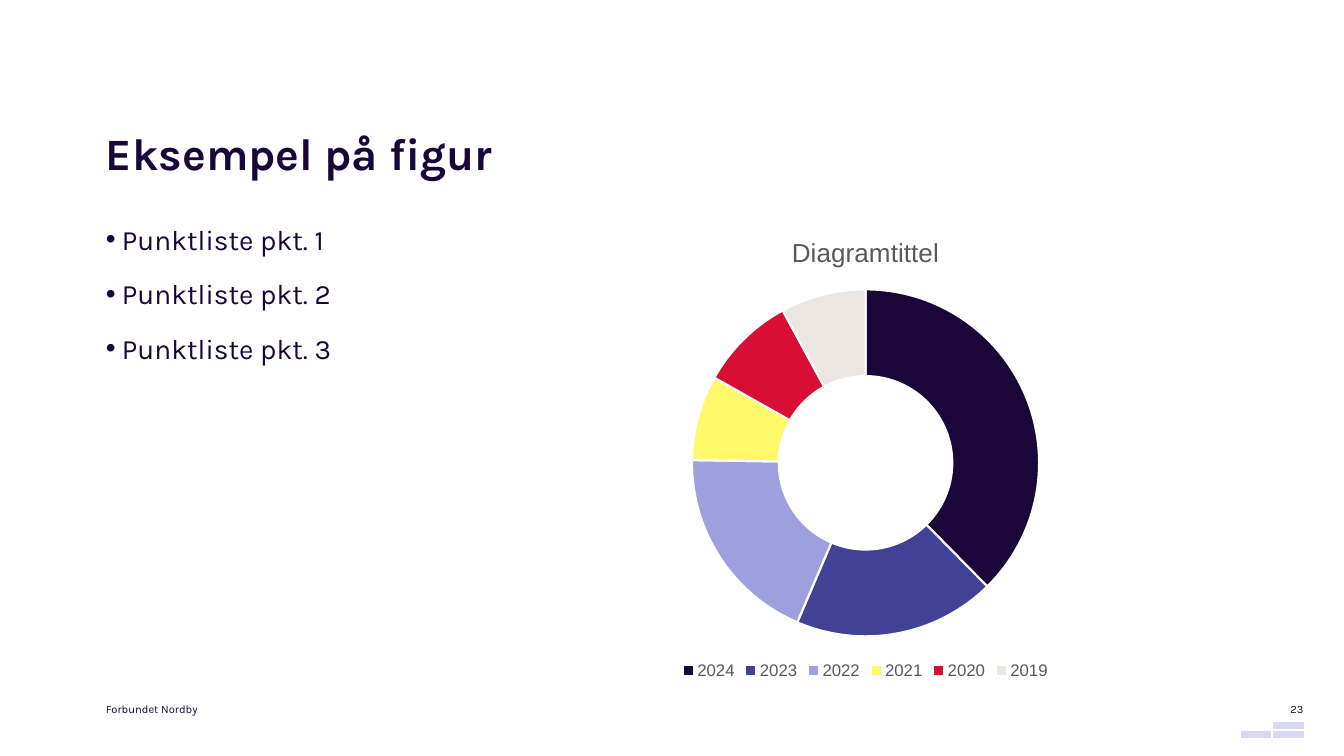
"""Builds a slide with a bullet list and a doughnut chart."""
import lxml.etree
import pptx
import pptx.chart.data
import pptx.dml.color
import pptx.enum.chart
import pptx.enum.shapes
import pptx.enum.text
import pptx.oxml.ns
import pptx.util

COLORS = {
    "ink": "1A0638",
    "indigo": "414197",
    "lavender": "9DA0DC",
    "yellow": "FFF969",
    "red": "D80E34",
    "sand": "ECE6E3",
    "pale": "D8D9F1",
    "grey": "595959",
    "white": "FFFFFF",
}
EMU_PER_PX = 9144
ALIGN = pptx.enum.text.PP_ALIGN
ANCHOR = pptx.enum.text.MSO_ANCHOR


def px(length):
    return pptx.util.Emu(length * EMU_PER_PX)


def rgb(name):
    return pptx.dml.color.RGBColor.from_string(COLORS[name])


class SlideBuilder:
    text_font = "Karla"
    chart_font = "Arial"

    def __init__(self, slide):
        self.slide = slide

    def set_font(self, font, size, color="ink", bold=False, name=None):
        font.name = name or self.text_font
        font.size = pptx.util.Pt(size)
        font.bold = bold
        font.color.rgb = rgb(color)

    def fill_text(self, shape, lines, size, bold=False, align=ALIGN.LEFT,
                  anchor=ANCHOR.TOP, line_spacing=None):
        frame = shape.text_frame
        frame.margin_left = frame.margin_right = 0
        frame.margin_top = frame.margin_bottom = 0
        frame.word_wrap = True
        frame.auto_size = pptx.enum.text.MSO_AUTO_SIZE.NONE
        frame.vertical_anchor = anchor
        frame.text = "\n".join(lines)
        for paragraph in frame.paragraphs:
            paragraph.alignment = align
            paragraph.line_spacing = line_spacing
            self.set_font(paragraph.font, size, bold=bold)
        return frame.paragraphs

    def title(self, text, left, top, width, height):
        shape = self.slide.shapes.title
        shape.left, shape.top = px(left), px(top)
        shape.width, shape.height = px(width), px(height)
        self.fill_text(shape, [text], 32, bold=True,
                       anchor=ANCHOR.BOTTOM, line_spacing=1.1)

    def text(self, lines, left, top, width, height, size, **style):
        shape = self.slide.shapes.add_textbox(
            px(left), px(top), px(width), px(height))
        return self.fill_text(shape, lines, size, **style)

    def bullets(self, lines, left, top, width, height):
        for paragraph in self.text(lines, left, top, width, height, 20,
                                   line_spacing=1.2):
            paragraph.space_before = pptx.util.Pt(10)
            properties = paragraph._p.get_or_add_pPr()
            properties.set("marL", str(px(16)))
            properties.set("indent", str(-px(20)))
            for tag, key, value in (("a:buFont", "typeface", "Arial"),
                                    ("a:buChar", "char", "•")):
                lxml.etree.SubElement(
                    properties, pptx.oxml.ns.qn(tag)).set(key, value)

    def bar(self, left, y, width):
        connector = self.slide.shapes.add_connector(
            pptx.enum.shapes.MSO_CONNECTOR.STRAIGHT,
            px(left), px(y), px(left + width), px(y))
        connector.line.color.rgb = rgb("pale")
        connector.line.width = pptx.util.Pt(4.75)
        lxml.etree.SubElement(connector._element.spPr,
                              pptx.oxml.ns.qn("a:effectLst"))

    def doughnut(self, title, slices, left, top, width, height):
        data = pptx.chart.data.CategoryChartData()
        data.categories = [category for category, _, _ in slices]
        data.add_series(title, [value for _, value, _ in slices])
        chart = self.slide.shapes.add_chart(
            pptx.enum.chart.XL_CHART_TYPE.DOUGHNUT,
            px(left), px(top), px(width), px(height), data).chart
        chart.font.name = self.chart_font
        chart.font.size = pptx.util.Pt(10)

        chart.has_title = True
        frame = chart.chart_title.text_frame
        frame.text = title
        self.set_font(frame.paragraphs[0].font, 18.6, "grey",
                      name=self.chart_font)
        chart.chart_title.include_in_layout = False

        chart.has_legend = True
        chart.legend.position = pptx.enum.chart.XL_LEGEND_POSITION.BOTTOM
        chart.legend.include_in_layout = False
        self.set_font(chart.legend.font, 12, "grey", name=self.chart_font)

        plot = chart.plots[0]
        plot.vary_by_categories = True
        plot._element.find(pptx.oxml.ns.qn("c:holeSize")).set("val", "75")
        for index, (_, _, color) in enumerate(slices):
            point = plot.series[0].points[index].format
            point.fill.solid()
            point.fill.fore_color.rgb = rgb(color)
            point.line.color.rgb = rgb("white")
            point.line.width = pptx.util.Pt(1.5)


def main():
    presentation = pptx.Presentation()
    presentation.slide_width = px(1333)
    presentation.slide_height = px(750)
    slide = presentation.slides.add_slide(presentation.slide_layouts[5])
    builder = SlideBuilder(slide)

    builder.text(["Forbundet Nordby"], 105, 697, 108, 13, 8)
    for left, y in ((1263, 729), (1263, 720), (1231, 729)):
        builder.bar(left, y, 30)
    builder.title("Eksempel på figur", 105, 55, 1127, 123)
    builder.bullets([f"Punktliste pkt. {number}" for number in (1, 2, 3)],
                    105, 214, 531, 464)
    builder.text(["23"], 1255, 697, 38, 19, 8, align=ALIGN.RIGHT)
    builder.doughnut("Diagramtittel", [
        ("2024", 38, "ink"),
        ("2023", 19, "indigo"),
        ("2022", 19, "lavender"),
        ("2021", 8, "yellow"),
        ("2020", 9, "red"),
        ("2019", 8, "sand"),
    ], 593, 214, 531, 464)
    presentation.save("out.pptx")


if __name__ == "__main__":
    main()
